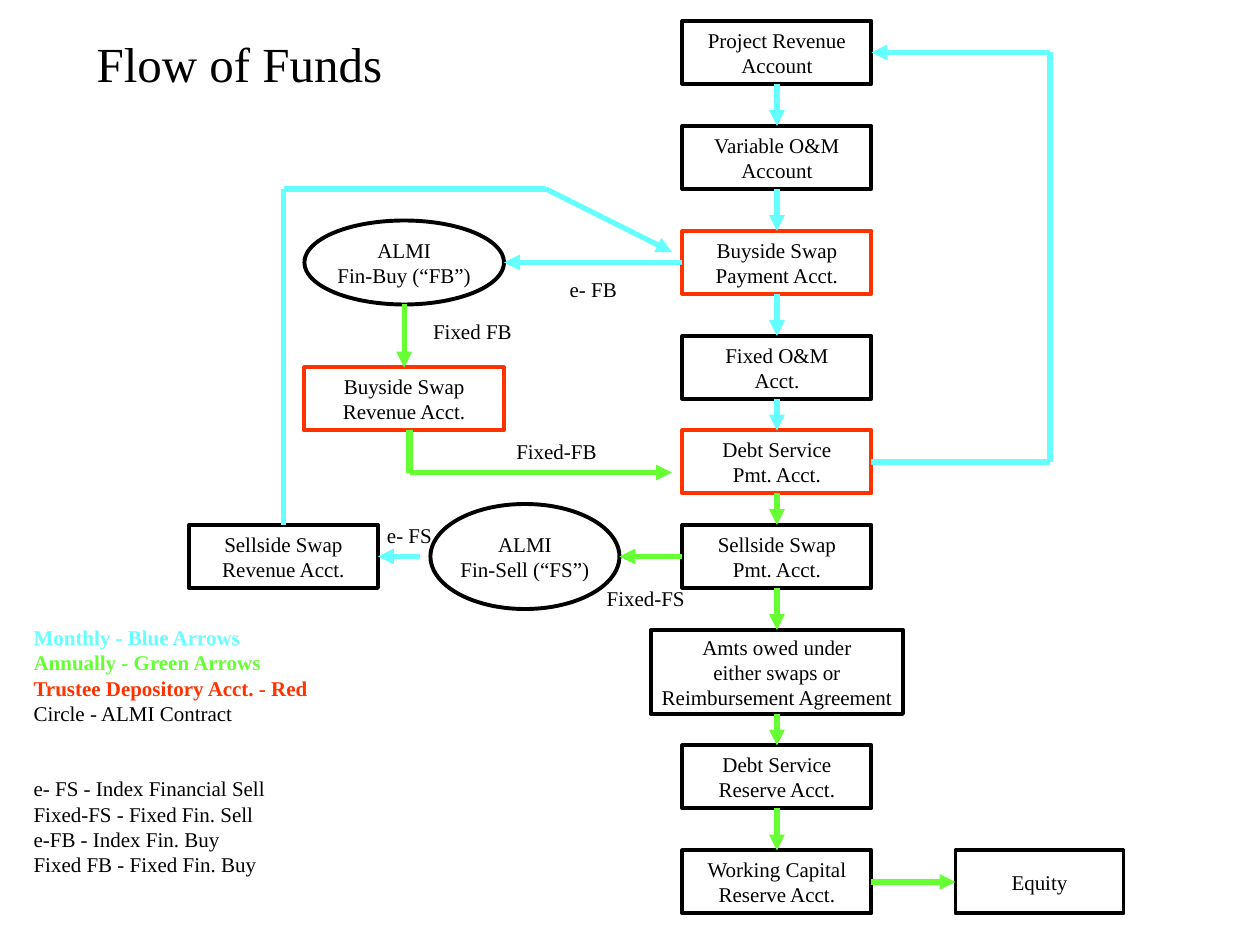
import itertools

import pptx
import pptx.dml.color
import pptx.enum.shapes
import pptx.enum.text
import pptx.oxml.ns
import pptx.util
from lxml import etree

RGBColor = pptx.dml.color.RGBColor
BLACK = RGBColor(0x00, 0x00, 0x00)
RED = RGBColor(0xFF, 0x33, 0x00)
BLUE = RGBColor(0x66, 0xFF, 0xFF)
GREEN = RGBColor(0x66, 0xFF, 0x33)

RECTANGLE = pptx.enum.shapes.MSO_SHAPE.RECTANGLE
OVAL = pptx.enum.shapes.MSO_SHAPE.OVAL
LEFT = pptx.enum.text.PP_ALIGN.LEFT
CENTER = pptx.enum.text.PP_ALIGN.CENTER

STEPS_PER_INCH = 12


def grid(steps):
    return pptx.util.Cm(steps * 2.54 / STEPS_PER_INCH)


class FlowSlide:
    font_name = "Times New Roman"
    text_size = 12
    border_width = 2.25
    arrow_width = 3

    def __init__(self, deck):
        self.page = deck.slides.add_slide(deck.slide_layouts[1])

    def set_text(self, shape, lines, size=text_size, align=CENTER, wrap=False):
        frame = shape.text_frame
        frame.text = "\n".join(lines)
        frame.word_wrap = wrap
        frame.auto_size = pptx.enum.text.MSO_AUTO_SIZE.NONE
        frame.vertical_anchor = pptx.enum.text.MSO_ANCHOR.MIDDLE
        for para in frame.paragraphs:
            para.alignment = align
            para.space_before = pptx.util.Pt(0)
            for span in para.runs:
                span.font.name = self.font_name
                span.font.size = pptx.util.Pt(size)
                span.font.color.rgb = BLACK
        return frame.paragraphs

    def place(self, shape, left, top, width, height):
        shape.left, shape.top = grid(left), grid(top)
        shape.width, shape.height = grid(width), grid(height)

    def title(self, text, *area):
        shape = self.page.shapes.title
        self.place(shape, *area)
        self.set_text(shape, [text], size=28, align=LEFT, wrap=True)

    def legend(self, colored, plain, gap, *area):
        shape = self.page.placeholders[1]
        self.place(shape, *area)
        lines = [text for text, color in colored] + plain
        paras = self.set_text(shape, lines, align=LEFT, wrap=True)
        for para in paras:
            properties = para._p.get_or_add_pPr()
            properties.set("marL", "0")
            properties.set("indent", "0")
            etree.SubElement(properties, pptx.oxml.ns.qn("a:buNone"))
        for para, (text, color) in zip(paras, colored):
            para.runs[0].font.color.rgb = color
            para.runs[0].font.bold = color != BLACK
        paras[len(colored)].space_before = pptx.util.Pt(gap)

    def account(self, lines, left, top, width=18, height=6, border=BLACK, kind=RECTANGLE):
        box = self.page.shapes.add_shape(
            kind, grid(left), grid(top), grid(width), grid(height))
        box.shadow.inherit = False
        box.fill.background()
        box.line.color.rgb = border
        box.line.width = pptx.util.Pt(self.border_width)
        self.set_text(box, lines)

    def label(self, text, left, top, width, height):
        box = self.page.shapes.add_textbox(
            grid(left), grid(top), grid(width), grid(height))
        self.set_text(box, [text])

    def line(self, start, end, color, width=arrow_width, arrow=False):
        link = self.page.shapes.add_connector(
            pptx.enum.shapes.MSO_CONNECTOR.STRAIGHT, *map(grid, start + end))
        link.line.color.rgb = color
        link.line.width = pptx.util.Pt(width)
        if arrow:
            outline = link.line._get_or_add_ln()
            etree.SubElement(outline, pptx.oxml.ns.qn("a:tailEnd"), type="triangle")
        etree.SubElement(link._element.spPr, pptx.oxml.ns.qn("a:effectLst"))

    def route(self, color, *points):
        for start, end in itertools.pairwise(points):
            self.line(start, end, color, arrow=end == points[-1])


def main():
    deck = pptx.Presentation()
    deck.slide_width = grid(10 * STEPS_PER_INCH)
    deck.slide_height = grid(7.5 * STEPS_PER_INCH)
    flow = FlowSlide(deck)

    flow.title("Flow of Funds", 8, 4, 35, 4)

    center = 74
    waterfall = [
        (["Project Revenue", "Account"], 2, 18, 6, BLACK, BLUE),
        (["Variable O&M", "Account"], 12, 18, 6, BLACK, BLUE),
        (["Buyside Swap", "Payment Acct."], 22, 18, 6, RED, BLUE),
        (["Fixed O&M", "Acct."], 32, 18, 6, BLACK, BLUE),
        (["Debt Service", "Pmt. Acct."], 41, 18, 6, RED, GREEN),
        (["Sellside Swap", "Pmt. Acct."], 50, 18, 6, BLACK, GREEN),
        (["Amts owed under", "either swaps or", "Reimbursement Agreement"],
         60, 24, 8, BLACK, GREEN),
        (["Debt Service", "Reserve Acct."], 71, 18, 6, BLACK, GREEN),
        (["Working Capital", "Reserve Acct."], 81, 18, 6, BLACK, GREEN),
    ]
    for lines, top, width, height, border, color in waterfall:
        flow.account(lines, center - width / 2, top, width, height, border)

    flow.account(["Equity"], 91, 81, width=16)
    flow.account(["Sellside Swap", "Revenue Acct."], 18, 50)
    flow.account(["Buyside Swap", "Revenue Acct."], 29, 35, width=19, border=RED)
    flow.account(["ALMI", "Fin-Buy (“FB”)"], 29, 21, 19, 8, kind=OVAL)
    flow.account(["ALMI", "Fin-Sell (“FS”)"], 41, 48, 18, 10, kind=OVAL)

    for upper, lower in itertools.pairwise(waterfall):
        lines, top, width, height, border, color = upper
        flow.route(color, (center, top + height), (center, lower[1]))

    flow.route(BLUE, (83, 44), (100, 44), (100, 5), (83, 5))
    flow.route(BLUE, (27, 50), (27, 18), (52, 18), (64, 24))
    flow.route(BLUE, (40, 53), (36, 53))
    flow.route(BLUE, (65, 25), (48, 25))
    flow.line((39, 41), (39, 45), GREEN, width=4.5)
    flow.route(GREEN, (39, 45), (64, 45))
    flow.route(GREEN, (65, 53), (59, 53))
    flow.route(GREEN, (38.5, 29), (38.5, 35))
    flow.route(GREEN, (83, 84), (91, 84))

    flow.label("Fixed-FB", 46, 42, 14, 2)
    flow.label("Fixed FB", 39, 30, 12, 3)
    flow.label("e- FB", 51, 26, 11, 3)
    flow.label("e- FS", 36, 50, 6, 2)
    flow.label("Fixed-FS", 57, 56, 9, 2)

    frequencies = [
        ("Monthly - Blue Arrows", BLUE),
        ("Annually - Green Arrows", GREEN),
        ("Trustee Depository Acct. - Red", RED),
        ("Circle - ALMI Contract", BLACK),
    ]
    abbreviations = [
        "e- FS - Index Financial Sell",
        "Fixed-FS - Fixed Fin. Sell",
        "e-FB - Index Fin. Buy",
        "Fixed FB - Fixed Fin. Buy",
    ]
    flow.legend(frequencies, abbreviations, 28.8, 2, 58, 34, 27)

    deck.save("out.pptx")


if __name__ == "__main__":
    main()
